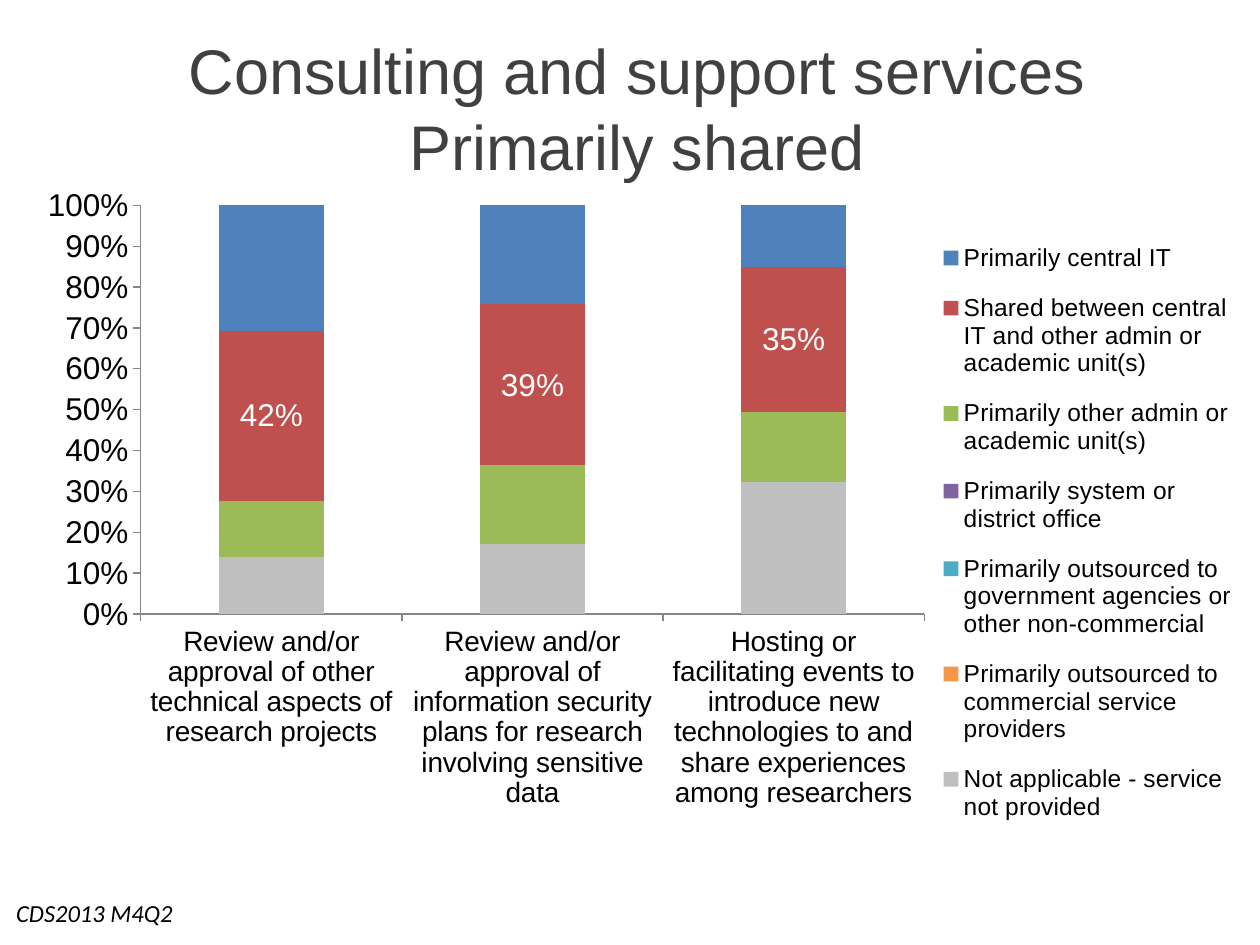
from dataclasses import dataclass

from lxml.etree import SubElement
from pptx import Presentation
from pptx.chart.data import CategoryChartData
from pptx.dml.color import RGBColor
from pptx.enum.chart import XL_CHART_TYPE as ChartType
from pptx.enum.chart import XL_LEGEND_POSITION as LegendPosition
from pptx.enum.chart import XL_TICK_MARK as TickMark
from pptx.enum.text import MSO_ANCHOR as Anchor
from pptx.enum.text import MSO_AUTO_SIZE as AutoSize
from pptx.enum.text import PP_ALIGN as Align
from pptx.oxml.ns import qn
from pptx.util import Inches, Pt


@dataclass(frozen=True)
class Theme:
    font: str = "Arial"
    note_font: str = "Calibri"
    title_color: str = "404040"
    text_color: str = "000000"
    label_color: str = "FFFFFF"
    axis_color: str = "868686"
    title_size: int = 36
    chart_size: int = 18
    category_size: int = 16
    legend_size: int = 14
    note_size: int = 14


THEME = Theme()
PERCENT = "0%"
PLOT_AREA = (0.098, 0.037, 0.643, 0.572)
LEGEND_AREA = (0.75, 0.06, 0.25, 0.87)
CATEGORIES = (
    "Review and/or approval of other technical aspects of research projects",
    "Review and/or approval of information security plans for research "
    "involving sensitive data",
    "Hosting or facilitating events to introduce new technologies to and "
    "share experiences among researchers",
)
SHARED = "Shared between central IT and other admin or academic unit(s)"
SERIES = (
    ("Not applicable - service not provided", (0.14, 0.17, 0.32), "BFBFBF"),
    ("Primarily outsourced to commercial service providers", (0, 0, 0), "F79646"),
    ("Primarily outsourced to government agencies or other non-commercial",
     (0, 0, 0), "4BACC6"),
    ("Primarily system or district office", (0, 0, 0), "8064A2"),
    ("Primarily other admin or academic unit(s)", (0.14, 0.19, 0.17), "9BBB59"),
    (SHARED, (0.42, 0.39, 0.35), "C0504D"),
    ("Primarily central IT", (0.31, 0.24, 0.15), "4F81BD"),
)


def style_font(font, size, color, name=THEME.font):
    font.name = name
    font.size = Pt(size)
    font.color.rgb = RGBColor.from_string(color)


def place(shape, left, top, width, height):
    shape.left, shape.top = Inches(left), Inches(top)
    shape.width, shape.height = Inches(width), Inches(height)


def add_title(slide, lines):
    title = slide.shapes.title
    place(title, 0.67, 0.17, 8.77, 0.8)
    frame = title.text_frame
    frame.word_wrap = True
    frame.auto_size = AutoSize.NONE
    frame.vertical_anchor = Anchor.TOP
    frame.margin_top = Inches(0.08)
    paragraph = frame.paragraphs[0]
    paragraph.alignment = Align.CENTER
    for index, line in enumerate(lines):
        if index:
            paragraph.add_line_break()
        run = paragraph.add_run()
        run.text = line
        style_font(run.font, THEME.title_size, THEME.title_color)


def add_note(slide, text):
    box = slide.shapes.add_textbox(0, 0, 0, 0)
    place(box, 0.03, 7.08, 3.67, 0.34)
    box.text_frame.word_wrap = True
    box.text_frame.auto_size = AutoSize.SHAPE_TO_FIT_TEXT
    run = box.text_frame.paragraphs[0].add_run()
    run.text = text
    style_font(run.font, THEME.note_size, THEME.text_color, THEME.note_font)
    run.font.italic = True


def set_layout(parent, position, area, inner=False):
    for old in parent.findall(qn("c:layout")):
        parent.remove(old)
    layout = SubElement(parent, qn("c:layout"))
    parent.insert(position, layout)
    manual = SubElement(layout, qn("c:manualLayout"))
    settings = [("layoutTarget", "inner")] if inner else []
    settings += [("xMode", "edge"), ("yMode", "edge")]
    settings += zip("xywh", area)
    for tag, value in settings:
        SubElement(manual, qn(f"c:{tag}")).set("val", str(value))


def style_axis(axis, size):
    axis.has_major_gridlines = False
    axis.major_tick_mark = TickMark.OUTSIDE
    axis.minor_tick_mark = TickMark.NONE
    axis.format.line.color.rgb = RGBColor.from_string(THEME.axis_color)
    style_font(axis.tick_labels.font, size, THEME.text_color)


def style_series(series, color):
    series.format.fill.solid()
    series.format.fill.fore_color.rgb = RGBColor.from_string(color)
    if series.name == SHARED:
        labels = series.data_labels
        labels.show_value = True
        labels.number_format = PERCENT
        labels.number_format_is_linked = False
        style_font(labels.font, THEME.chart_size, THEME.label_color)


def add_legend(chart):
    chart.has_legend = True
    chart.legend.position = LegendPosition.RIGHT
    chart.legend.include_in_layout = False
    style_font(chart.legend.font, THEME.legend_size, THEME.text_color)


def add_services_chart(slide):
    data = CategoryChartData(number_format=PERCENT)
    data.categories = CATEGORIES
    for name, values, _ in SERIES:
        data.add_series(name, values)
    frame = slide.shapes.add_chart(ChartType.COLUMN_STACKED_100, 0, 0, 0, 0, data)
    place(frame, 0.17, 1.42, 9.67, 5.67)
    chart = frame.chart
    chart.has_title = False
    style_font(chart.font, THEME.chart_size, THEME.text_color)
    style_axis(chart.category_axis, THEME.category_size)
    style_axis(chart.value_axis, THEME.chart_size)
    chart.value_axis.tick_labels.number_format = PERCENT
    chart.value_axis.tick_labels.number_format_is_linked = False

    plot = chart.plots[0]
    plot.gap_width, plot.overlap = 150, 100
    plot.vary_by_categories = False
    for series, (_, _, color) in zip(plot.series, SERIES):
        style_series(series, color)
    add_legend(chart)
    set_layout(chart.element.find(".//" + qn("c:plotArea")), 0, PLOT_AREA, inner=True)
    set_layout(chart.element.find(".//" + qn("c:legend")), 1, LEGEND_AREA)


def main():
    presentation = Presentation()
    presentation.slide_width, presentation.slide_height = Inches(10), Inches(7.5)
    slide = presentation.slides.add_slide(presentation.slide_layouts[5])
    add_title(slide, ("Consulting and support services", "Primarily shared"))
    add_note(slide, "CDS2013 M4Q2")
    add_services_chart(slide)
    presentation.save("out.pptx")


if __name__ == "__main__":
    main()
